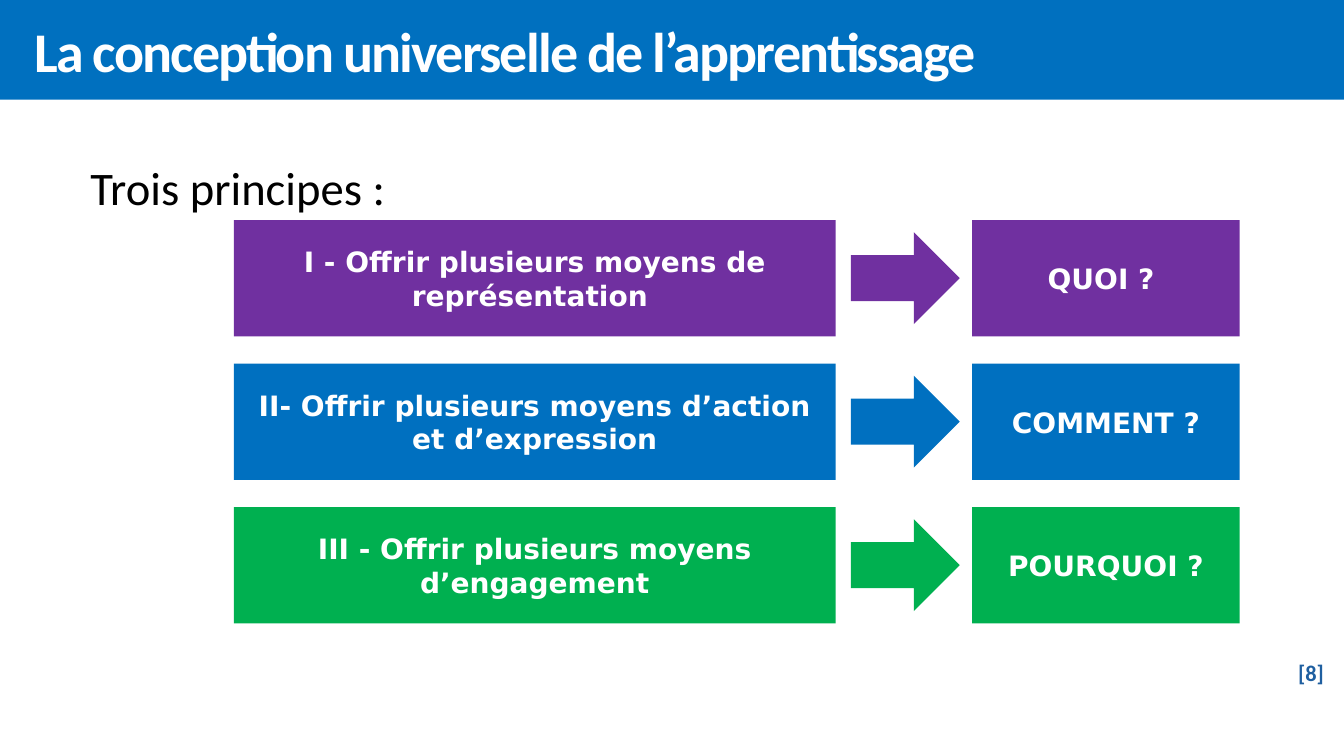
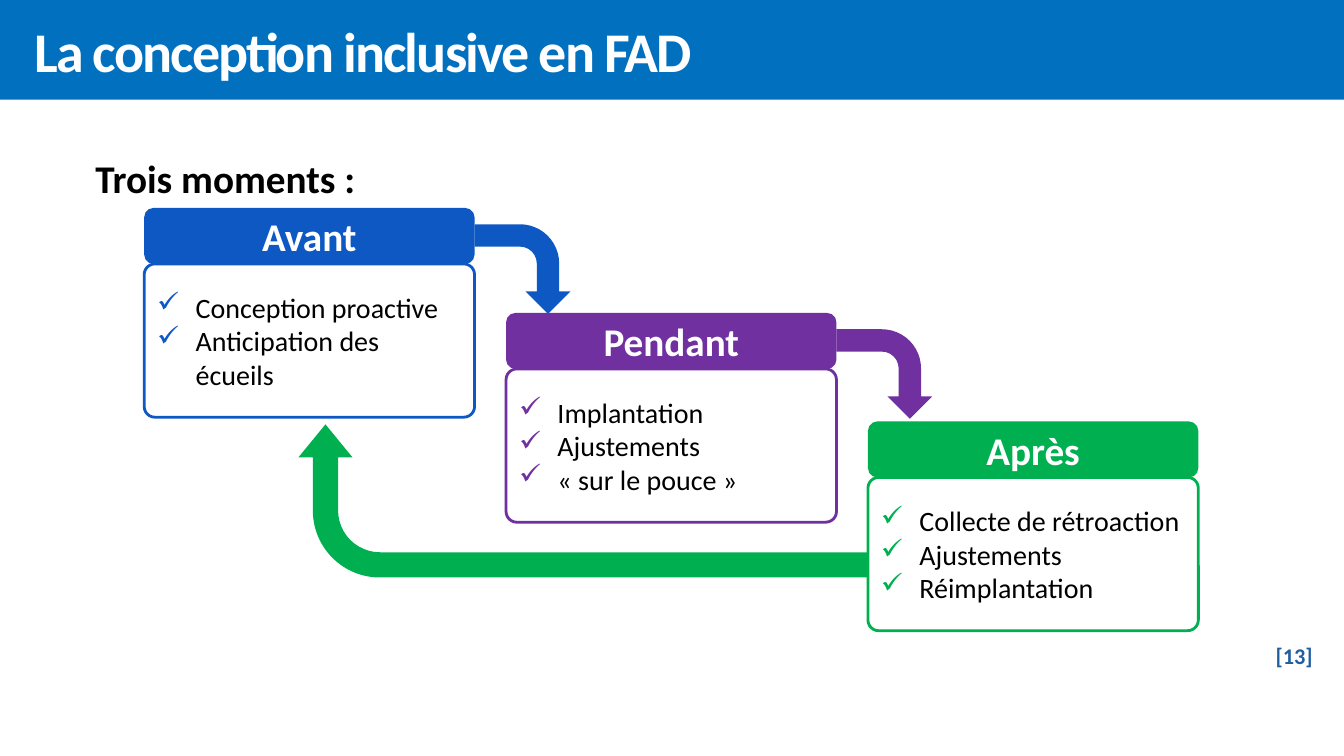
from lxml import etree
from pptx import Presentation
from pptx.dml.color import RGBColor
from pptx.enum.shapes import MSO_SHAPE
from pptx.enum.text import MSO_ANCHOR, MSO_AUTO_SIZE, PP_ALIGN
from pptx.oxml.ns import qn
from pptx.util import Pt

RECT = MSO_SHAPE.RECTANGLE
ROUND = MSO_SHAPE.ROUNDED_RECTANGLE
ARROW = MSO_SHAPE.RIGHT_ARROW
BENT = MSO_SHAPE.BENT_ARROW
MIDDLE = MSO_ANCHOR.MIDDLE
FIXED = MSO_AUTO_SIZE.NONE
LEFT, CENTER = PP_ALIGN.LEFT, PP_ALIGN.CENTER

TEXT, BLOCK = "Calibri", "DejaVu Sans"
COLORS = {
    "band": "0070BF",
    "blue": "0070C0",
    "royal": "0E58C4",
    "purple": "7030A0",
    "green": "00B050",
    "page": "1F5FA0",
    "white": "FFFFFF",
    "black": "000000",
}
WIDTH, HEIGHT = 960, 540
CARD_W, HEAD_H, BODY_H = 236, 40, 109.5


def color(name):
    return RGBColor.from_string(COLORS[name])


def style(para, size, tint, face=TEXT, bold=True, align=CENTER):
    para.alignment = align
    font = para.font
    font.name, font.size, font.bold = face, Pt(size), bold
    font.color.rgb = color(tint)


def add_shape(slide, kind, box, fill=None, line=None):
    shape = slide.shapes.add_shape(kind, *map(Pt, box))
    shape.shadow.inherit = False
    if fill:
        shape.fill.solid()
        shape.fill.fore_color.rgb = color(fill)
    else:
        shape.fill.background()
    if line:
        shape.line.color.rgb = color(line)
        shape.line.width = Pt(2)
    else:
        shape.line.fill.background()
    return shape


def add_label(slide, kind, box, fill, text, size, face):
    shape = add_shape(slide, kind, box, fill)
    frame = shape.text_frame
    frame.word_wrap = True
    frame.vertical_anchor = MIDDLE
    frame.text = text
    style(frame.paragraphs[0], size, "white", face)


def add_text(slide, box, text, size, tint, **look):
    frame = slide.shapes.add_textbox(*map(Pt, box)).text_frame
    frame.word_wrap = True
    frame.text = text
    style(frame.paragraphs[0], size, tint, **look)
    return frame


def add_lead(slide, left, top, text, size, bold):
    """Add the line that introduces the diagram."""
    box = (left, top, 800, 52)
    return add_text(slide, box, text, size, "black", bold=bold, align=LEFT)


def add_page(slide, left, top, num):
    frame = add_text(slide, (left, top, 58, 31), f"[{num}]", 16, "page")
    frame.vertical_anchor = MIDDLE


def new_slide(deck, text):
    """Start a slide with its title in the blue band."""
    slide = deck.slides.add_slide(deck.slide_layouts[5])
    title = slide.shapes.title
    title.left, title.top = Pt(0), Pt(0)
    title.width, title.height = Pt(WIDTH), Pt(71.25)
    title.fill.solid()
    title.fill.fore_color.rgb = color("band")
    frame = title.text_frame
    frame.auto_size = FIXED
    frame.vertical_anchor = MIDDLE
    frame.margin_left = Pt(24.5)
    frame.text = text
    para = frame.paragraphs[0]
    style(para, 40, "white", align=LEFT)
    para.runs[0].font._element.set("spc", "-130")
    return slide


def add_tick(para, tint):
    """Give a paragraph a coloured check mark and a hanging indent."""
    props = para._p.get_or_add_pPr()
    props.set("marL", str(Pt(27.4)))
    props.set("indent", str(-Pt(27.4)))
    hue = etree.SubElement(props, qn("a:buClr"))
    etree.SubElement(hue, qn("a:srgbClr")).set("val", COLORS[tint])
    etree.SubElement(props, qn("a:buChar")).set("char", "✓")


def add_card(slide, left, top, tint, head, items):
    box = (left, top + HEAD_H, CARD_W, BODY_H)
    body = add_shape(slide, ROUND, box, line=tint)
    body.adjustments[0] = 0.07
    frame = body.text_frame
    frame.word_wrap = True
    frame.vertical_anchor = MIDDLE
    frame.text = "\n".join(items)
    for para in frame.paragraphs:
        add_tick(para, tint)
        style(para, 20, "black", bold=False, align=LEFT)
    box = (left, top, CARD_W, HEAD_H)
    add_label(slide, ROUND, box, tint, head, 28, TEXT)


def add_bend(slide, box, turn, tint):
    arrow = add_shape(slide, BENT, box, tint)
    arrow.rotation = turn
    return arrow


def build_rules(deck):
    slide = new_slide(deck, "La conception universelle de l’apprentissage")
    lead = add_lead(slide, 57.5, 108, "Trois principes :", 33.3, False)
    lead.paragraphs[0].line_spacing = 1.05
    rows = [
        ("purple", "I - Offrir plusieurs moyens de représentation ", "QUOI ? "),
        ("blue", "II- Offrir plusieurs moyens d’action et d’expression",
         "COMMENT ?"),
        ("green", "III - Offrir plusieurs moyens d’engagement", "POURQUOI ?"),
    ]
    for row, (tint, rule, query) in enumerate(rows):
        top = 157.3 + row * 102.5
        add_label(slide, RECT, (167, top, 430, 83), tint, rule, 20, BLOCK)
        add_label(slide, RECT, (694.5, top, 191, 83), tint, query, 20, BLOCK)
        add_shape(slide, ARROW, (607.7, top + 8.6, 77.8, 65.6), tint)
    add_page(slide, 907.5, 465, 8)


def build_steps(deck):
    slide = new_slide(deck, "La conception inclusive en FAD")
    add_lead(slide, 61, 106.5, "Trois moments :", 28, True)
    cards = [
        (148.5, "royal", "Avant",
         ["Conception proactive", "Anticipation des écueils"]),
        (223.5, "purple", "Pendant",
         ["Implantation", "Ajustements", "« sur le pouce »"]),
        (301, "green", "Après",
         ["Collecte de rétroaction", "Ajustements", "Réimplantation"]),
    ]
    for col, (top, tint, head, items) in enumerate(cards):
        left = 103 + col * 258.5
        add_card(slide, left, top, tint, head, items)
        if col < len(cards) - 1:
            box = (left + CARD_W + 2.2, top + 9.5, 64, 68.4)
            add_bend(slide, box, 90, tint)
    back = add_bend(slide, (361.4, 154.8, 109.4, 406), 270, "green")
    for spot, ratio in enumerate((0.165, 0.177, 0.216, 0.438)):
        back.adjustments[spot] = ratio
    add_page(slide, 895.5, 453, 13)


def main():
    deck = Presentation()
    deck.slide_width, deck.slide_height = Pt(WIDTH), Pt(HEIGHT)
    build_rules(deck)
    build_steps(deck)
    deck.save("out.pptx")


if __name__ == "__main__":
    main()
